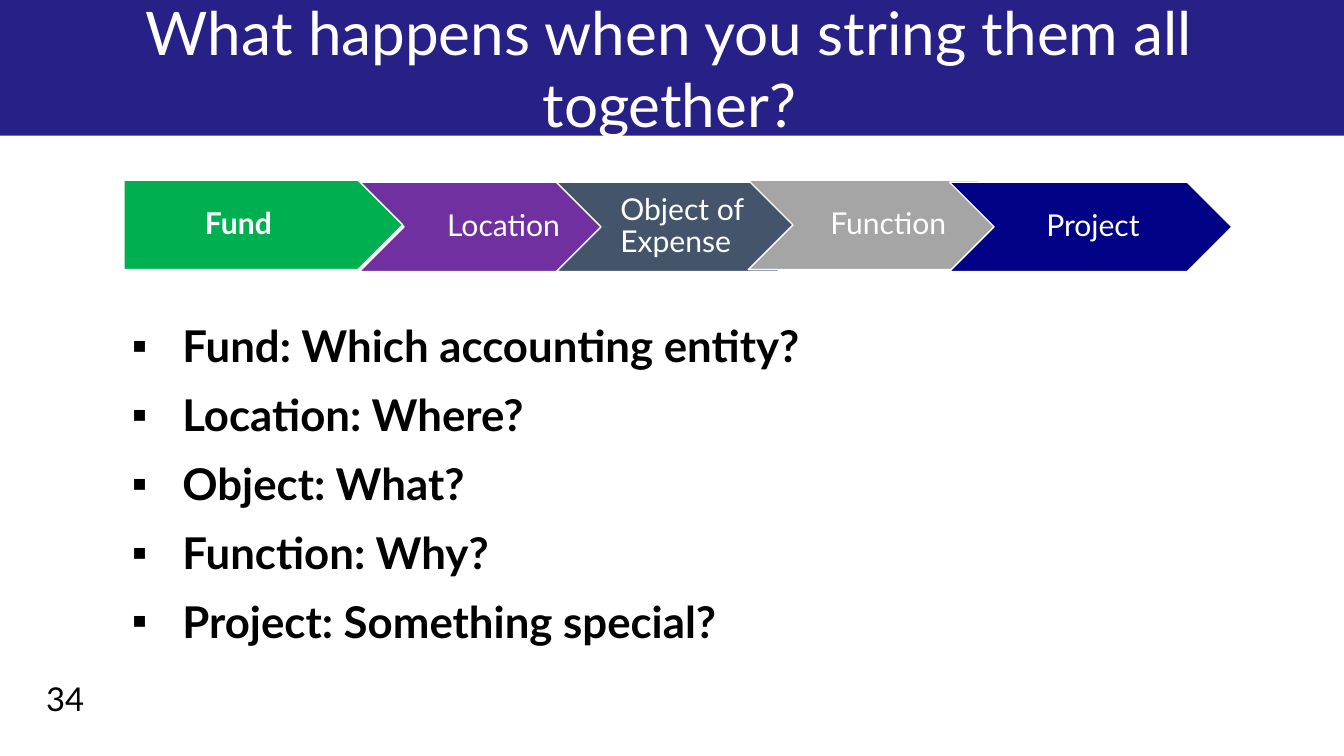
from lxml import etree
from pptx import Presentation
from pptx.dml.color import RGBColor
from pptx.enum import shapes, text
from pptx.oxml import ns
from pptx.util import Cm, Pt

WHITE = RGBColor(255, 255, 255)
BLACK = RGBColor(0, 0, 0)
INDIGO = RGBColor(0x26, 0x20, 0x87)
GREEN = RGBColor(0x00, 0xB0, 0x50)
PURPLE = RGBColor(0x70, 0x30, 0xA0)
SLATE = RGBColor(0x44, 0x54, 0x6A)
GREY = RGBColor(0xA5, 0xA5, 0xA5)
NAVY = RGBColor(0x02, 0x02, 0x86)

FONT = "Lato"
TITLE = "What happens when you string them all together?"
PAGE_NUMBER = "34"
QUESTIONS = [
    "Fund: Which accounting entity?",
    "Location: Where?",
    "Object: What?",
    "Function: Why?",
    "Project: Something special?",
]

CHEVRON = shapes.MSO_SHAPE.CHEVRON
PLATE = shapes.MSO_SHAPE.PENTAGON
CENTER = text.PP_ALIGN.CENTER
LEFT = text.PP_ALIGN.LEFT
ARROWS = [
    ("Location", CHEVRON, PURPLE, 9.27, 4.7, 7.32, CENTER),
    ("Object of Expense", CHEVRON, SLATE, 14.35, 4.7, 6.86, LEFT),
    ("Function", CHEVRON, GREY, 19.3, 4.65, 7.11, CENTER),
    ("Project", CHEVRON, NAVY, 24.49, 4.7, 7.29, CENTER),
    ("Fund", PLATE, GREEN, 3.2, 4.65, 7.19, CENTER),
]
ARROW_HEIGHT = 2.31
ARROW_INSETS = {CHEVRON: (0.5, 0.38), PLATE: (0.33, 1.04)}


def place(shape, left, top, width, height):
    shape.left, shape.top = Cm(left), Cm(top)
    shape.width, shape.height = Cm(width), Cm(height)


def style(para, size, color, bold=False):
    for span in para.runs:
        span.font.name = FONT
        span.font.size = Pt(size)
        span.font.bold = bold
        span.font.color.rgb = color


def add_title(page, width):
    bar = page.shapes.add_shape(shapes.MSO_SHAPE.RECTANGLE, 0, 0, width, Cm(3.5))
    bar.shadow.inherit = False
    bar.fill.solid()
    bar.fill.fore_color.rgb = INDIGO
    bar.line.fill.background()
    title = page.shapes.title
    title.element.addprevious(bar.element)
    place(title, 2.03, 0, 30.48, 3.5)
    frame = title.text_frame
    frame.text = TITLE
    frame.auto_size = text.MSO_AUTO_SIZE.NONE
    frame.vertical_anchor = text.MSO_ANCHOR.MIDDLE
    frame.paragraphs[0].alignment = CENTER
    style(frame.paragraphs[0], 44, WHITE)


def add_questions(page):
    body = page.placeholders[1]
    place(body, 3.15, 8.1, 28.09, 9.2)
    frame = body.text_frame
    frame.text = "\n".join(QUESTIONS)
    frame.auto_size = text.MSO_AUTO_SIZE.NONE
    for index, para in enumerate(frame.paragraphs):
        para.space_before = Pt(6 if index else 0)
        para.space_after = Pt(6)
        props = para._p.get_or_add_pPr()
        props.set("marL", str(Cm(1.3)))
        props.set("indent", str(-Cm(1.3)))
        etree.SubElement(props, ns.qn("a:buChar")).set("char", "▪")
        style(para, 32, BLACK, True)


def add_arrow(page, label, kind, color, left, top, width, alignment):
    arrow = page.shapes.add_shape(kind, Cm(left), Cm(top), Cm(width), Cm(ARROW_HEIGHT))
    arrow.shadow.inherit = False
    arrow.fill.solid()
    arrow.fill.fore_color.rgb = color
    arrow.line.color.rgb = WHITE
    arrow.line.width = Pt(1)
    frame = arrow.text_frame
    frame.text = label
    frame.word_wrap = True
    frame.vertical_anchor = text.MSO_ANCHOR.MIDDLE
    frame.margin_left, frame.margin_right = map(Cm, ARROW_INSETS[kind])
    frame.margin_top = frame.margin_bottom = Cm(0.15)
    para = frame.paragraphs[0]
    para.alignment = alignment
    para.line_spacing = 0.9
    style(para, 22, WHITE, kind == PLATE)


def add_page_number(page):
    box = page.shapes.add_textbox(Cm(0.94), Cm(17.4), Cm(2.24), Cm(1.27))
    box.text_frame.word_wrap = True
    box.text_frame.text = PAGE_NUMBER
    style(box.text_frame.paragraphs[0], 24, BLACK)


def main():
    deck = Presentation()
    deck.slide_width, deck.slide_height = Cm(34.67), Cm(19.51)
    page = deck.slides.add_slide(deck.slide_layouts[1])
    add_title(page, deck.slide_width)
    add_questions(page)
    add_page_number(page)
    for arrow in ARROWS:
        add_arrow(page, *arrow)
    deck.save("out.pptx")


if __name__ == "__main__":
    main()
